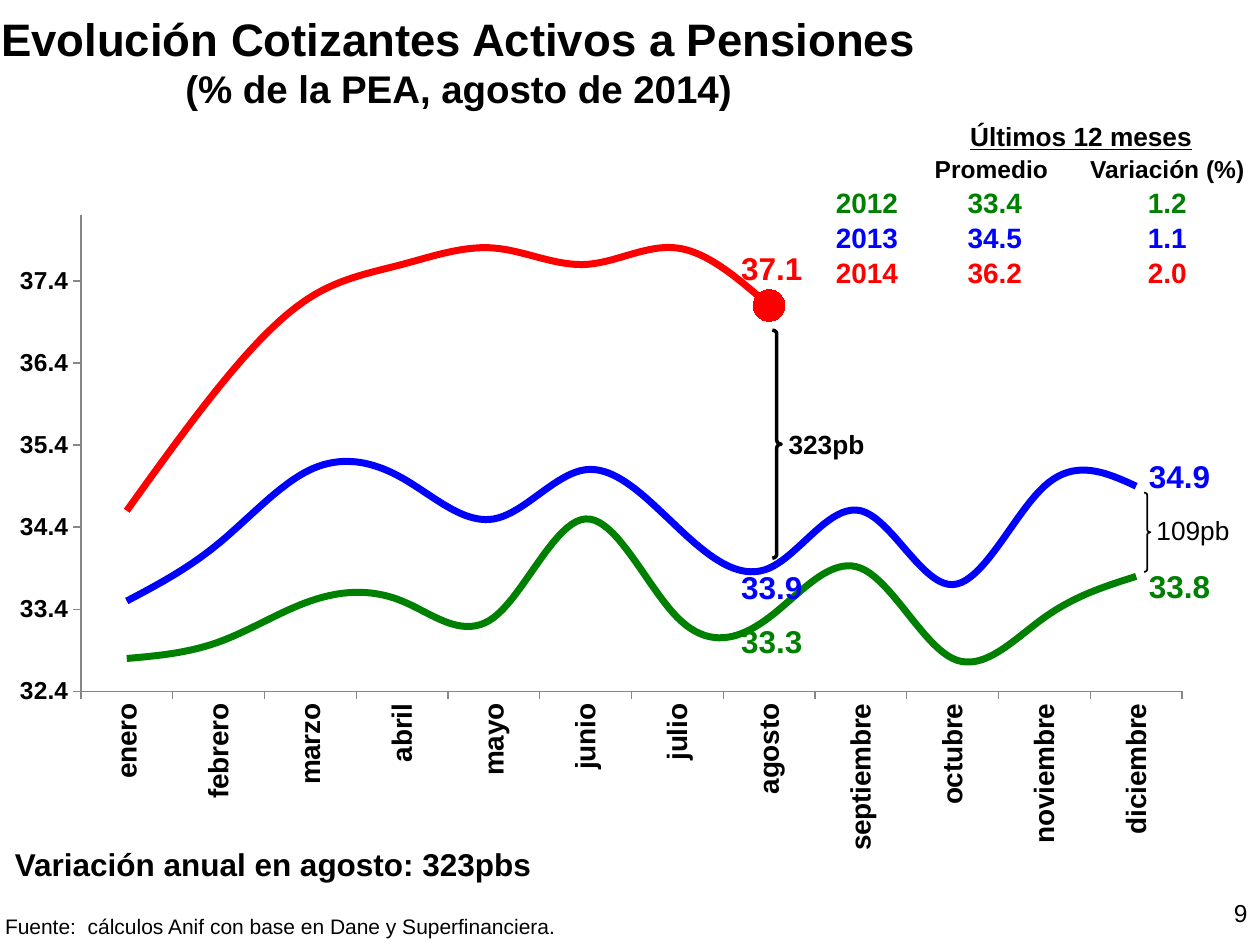
from lxml.etree import SubElement
from pptx import Presentation
from pptx.chart.data import CategoryChartData
from pptx.dml.color import RGBColor
from pptx.enum.chart import XL_CHART_TYPE, XL_MARKER_STYLE, XL_TICK_MARK
from pptx.enum.shapes import MSO_SHAPE
from pptx.enum.text import MSO_ANCHOR, MSO_AUTO_SIZE, PP_ALIGN
from pptx.oxml.ns import qn
from pptx.util import Inches, Pt

COLORS = {"ink": "000000", "paper": "FFFFFF", "axis": "868686",
          "2012": "008000", "2013": "0000FF", "2014": "FF0000"}
MONTHS = ["enero", "febrero", "marzo", "abril", "mayo", "junio", "julio", "agosto",
          "septiembre", "octubre", "noviembre", "diciembre"]
SHARES = {
    "2012": [32.8, 33, 33.5, 33.5, 33.3, 34.5, 33.3, 33.3, 33.9, 32.8, 33.3, 33.8],
    "2013": [33.5, 34.2, 35.1, 35, 34.5, 35.1, 34.4, 33.9, 34.6, 33.7, 34.9, 34.9],
    "2014": [34.6, 36.1, 37.2, 37.6, 37.8, 37.6, 37.8, 37.1] + [None] * 4,
}


def color(name):
    return RGBColor.from_string(COLORS[name])


class PensionSlide:
    """Places elements on a grid of 100 columns by 75 rows."""
    font_name = "Arial"

    def __init__(self, deck):
        self.column = deck.slide_width / 100
        self.row = deck.slide_height / 75
        self.page = deck.slides.add_slide(deck.slide_layouts[5])

    def place(self, left, top, width, height):
        return (round(left * self.column), round(top * self.row),
                round(width * self.column), round(height * self.row))

    def style(self, font, size, ink="ink", bold=True):
        font.name, font.size, font.bold = self.font_name, Pt(size), bold
        font.color.rgb = color(ink)

    def title(self, area, lines):
        box = self.page.shapes.title
        box.left, box.top, box.width, box.height = self.place(*area)
        frame = box.text_frame
        frame.vertical_anchor = MSO_ANCHOR.MIDDLE
        frame.auto_size = MSO_AUTO_SIZE.NONE
        para = frame.paragraphs[0]
        para.alignment = PP_ALIGN.CENTER
        for index, (text, size) in enumerate(lines):
            if index:
                para.add_line_break()
            span = para.add_run()
            span.text = text
            self.style(span.font, size)

    def text(self, area, text, size, ink="ink", bold=True, align=PP_ALIGN.LEFT,
             wrap=True, inset=None):
        frame = self.page.shapes.add_textbox(*self.place(*area)).text_frame
        frame.word_wrap = wrap
        frame.auto_size = MSO_AUTO_SIZE.SHAPE_TO_FIT_TEXT
        if inset is not None:
            frame.margin_left = frame.margin_right = inset
            frame.margin_top = frame.margin_bottom = inset
        para = frame.paragraphs[0]
        para.text, para.alignment = text, align
        self.style(para.font, size, ink, bold)

    def brace(self, area, weight):
        brace = self.page.shapes.add_shape(MSO_SHAPE.RIGHT_BRACE, *self.place(*area))
        brace.adjustments[0] = 0.41
        brace.shadow.inherit = False
        brace.fill.background()
        brace.line.color.rgb = color("ink")
        brace.line.width = Pt(weight)

    def table(self, area, widths, heights, rows):
        table = self.page.shapes.add_table(len(heights), len(widths), *self.place(*area)).table
        table.first_row = table.horz_banding = False
        for column, width in zip(table.columns, widths):
            column.width = round(width * self.column)
        for row, height in zip(table.rows, heights):
            row.height = round(height * self.row)
        table.cell(0, 1).merge(table.cell(0, 2))
        for row, (texts, size, ink) in enumerate(rows):
            for column, text in enumerate(texts):
                cell = table.cell(row, column)
                cell.fill.solid()
                cell.fill.fore_color.rgb = color("paper")
                cell.vertical_anchor = MSO_ANCHOR.MIDDLE
                cell.margin_left = cell.margin_right = cell.margin_top = Inches(0.01)
                cell.margin_bottom = 0
                para = cell.text_frame.paragraphs[0]
                para.text, para.alignment = text, PP_ALIGN.CENTER
                self.style(para.font, size, ink)
                para.font.underline = row == 0
                if not text:  # keeps empty cells from stretching their row
                    para._p.get_or_add_endParaRPr().set("sz", str(size * 100))

    def axis(self, axis, size):
        axis.has_major_gridlines = False
        axis.major_tick_mark = XL_TICK_MARK.OUTSIDE
        axis.format.line.color.rgb = color("axis")
        self.style(axis.tick_labels.font, size)

    def chart(self, area, plot_area):
        data = CategoryChartData()
        data.categories = MONTHS
        for year, values in SHARES.items():
            data.add_series(year, values)
        chart = self.page.shapes.add_chart(XL_CHART_TYPE.LINE, *self.place(*area), data).chart
        chart.has_legend = chart.has_title = False
        self.style(chart.font, 10, bold=False)

        # Axes
        self.axis(chart.category_axis, 16)
        labels = chart.category_axis._element.find(qn("c:txPr")).find(qn("a:bodyPr"))
        labels.set("rot", "-5400000")
        labels.set("vert", "horz")
        scale = chart.value_axis
        self.axis(scale, 14)
        scale.minimum_scale, scale.maximum_scale, scale.major_unit = 32.4, 38.2, 1
        scale.tick_labels.number_format = "#,##0.0"
        scale.tick_labels.number_format_is_linked = False

        # Lines, with a dot on the latest month
        for series in chart.plots[0].series:
            series.smooth = True
            series.marker.style = XL_MARKER_STYLE.NONE
            series.format.line.color.rgb = color(series.name)
            series.format.line.width = Pt(4)
        latest = chart.plots[0].series[2].points[MONTHS.index("agosto")]
        latest.format.line.color.rgb = color("2014")
        latest.format.line.width = Pt(4)
        latest.marker.style, latest.marker.size = XL_MARKER_STYLE.CIRCLE, 18
        latest.marker.format.fill.solid()
        latest.marker.format.fill.fore_color.rgb = color("2014")
        latest.marker.format.line.color.rgb = color("2014")

        # Fixed inner plot area
        plot = chart._chartSpace.chart.plotArea
        layout = plot.find(qn("c:layout"))
        if layout is None:
            layout = SubElement(plot, qn("c:layout"))
            plot.insert(0, layout)
        manual = SubElement(layout, qn("c:manualLayout"))
        settings = [("layoutTarget", "inner"), ("xMode", "edge"), ("yMode", "edge")]
        for tag, value in settings + list(zip("xywh", plot_area)):
            SubElement(manual, qn("c:" + tag)).set("val", str(value))


def main():
    deck = Presentation()
    deck.slide_width, deck.slide_height = Inches(10), Inches(7.5)
    slide = PensionSlide(deck)

    # Title and chart
    slide.title((-1.6, 0.5, 76, 8.7), [("Evolución Cotizantes Activos a Pensiones", 26),
                                       ("(% de la PEA, agosto de 2014)", 22)])
    slide.chart((0.9, 13.5, 96.8, 55.1), (0.057, 0.065, 0.903, 0.686))

    # Page number and notes at the foot
    slide.text((93.3, 70.8, 6.7, 4.2), "9", 14, bold=False, align=PP_ALIGN.RIGHT)
    slide.text((0.2, 66.6, 43.4, 4), "Variación anual en agosto: 323pbs", 18, wrap=False)
    slide.text((0.4, 72.5, 44, 2),
               "Fuente:  cálculos Anif con base en Dane y Superfinanciera.", 12,
               bold=False, wrap=False, inset=0)

    # Values for August and December
    for year, top, value in [("2012", 48.9, "33.3"), ("2013", 44.6, "33.9"),
                             ("2014", 19.3, "37.1")]:
        slide.text((57.5, top, 7.5, 4), value, 18, year, align=PP_ALIGN.CENTER)
    for year, top, value in [("2012", 44.5, "33.8"), ("2013", 35.8, "34.9")]:
        slide.text((90.2, top, 7.5, 4), value, 18, year)

    # Last twelve months
    slide.table((65.5, 9.5, 34, 13.6), [6.6, 13.7, 13.7], [2.7, 2.5, 2.8, 2.8, 2.8], [
        (["", "Últimos 12 meses", ""], 15, "ink"),
        (["", "Promedio ", "Variación (%)"], 14, "ink"),
        (["2012", "33.4", "1.2"], 16, "2012"),
        (["2013", "34.5", "1.1"], 16, "2013"),
        (["2014", "36.2", "2.0"], 16, "2014"),
    ])

    # Gaps between the lines
    slide.brace((61.3, 26.2, 0.7, 18.1), 2)
    slide.text((61.6, 33.5, 8.1, 3.5), "323pb", 15)
    slide.brace((90.8, 39.1, 0.5, 6.3), 1)
    slide.text((90.8, 40.3, 8.1, 3.5), "109pb", 15, bold=False)

    deck.save("out.pptx")


if __name__ == "__main__":
    main()
